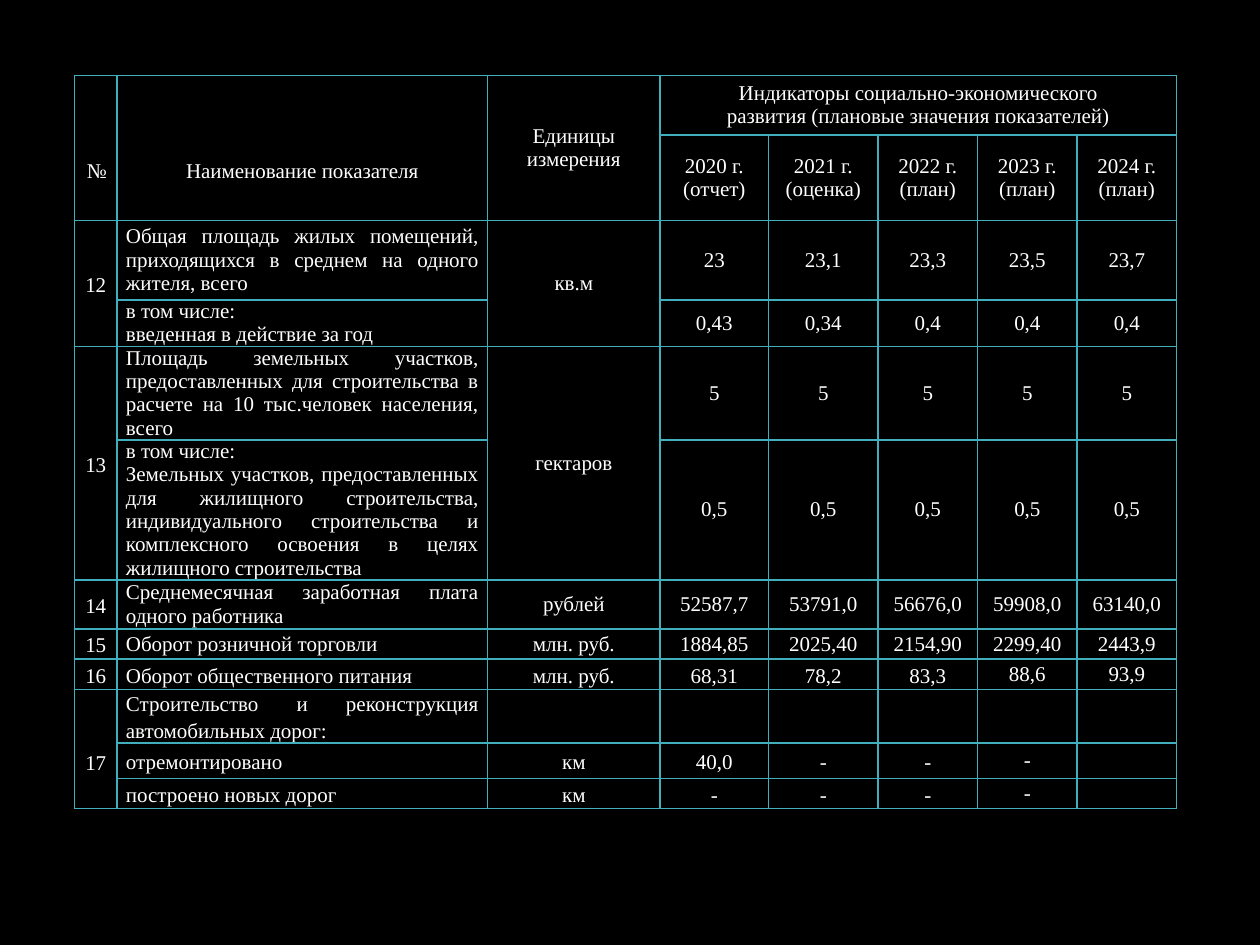
"""Build a slide with a table of socio-economic development indicators."""
from dataclasses import dataclass

from lxml.etree import SubElement
from pptx import Presentation
from pptx.dml.color import RGBColor
from pptx.enum.text import MSO_ANCHOR as Anchor, PP_ALIGN as Align
from pptx.oxml.ns import qn
from pptx.util import Inches, Pt


@dataclass(frozen=True)
class Theme:
    background: str = "000000"
    ink: str = "FFFFFF"
    border: str = "41AEBD"
    font: str = "Times New Roman"
    size: int = 12
    border_width: int = 1
    relaxed: float = 1.15


THEME = Theme()
HEADINGS = [
    ["№", "Наименование показателя", "Единицы\nизмерения",
     "Индикаторы социально-экономического\nразвития (плановые значения показателей)",
     "", "", "", ""],
    ["", "", "", "2020 г. (отчет)", "2021 г. (оценка)", "2022 г. (план)",
     "2023 г. (план)", "2024 г. (план)"],
]
INDICATORS = [
    ["12", "Общая площадь жилых помещений, приходящихся в среднем на одного жителя, всего",
     "кв.м", "23", "23,1", "23,3", "23,5", "23,7"],
    ["", "в том числе:\nвведенная в действие за год", "",
     "0,43", "0,34", "0,4", "0,4", "0,4"],
    ["13", "Площадь земельных участков, предоставленных для строительства в расчете "
     "на 10 тыс.человек населения, всего", "гектаров", "5", "5", "5", "5", "5"],
    ["", "в том числе:\nЗемельных участков, предоставленных для жилищного строительства, "
     "индивидуального строительства и комплексного освоения в целях жилищного строительства",
     "", "0,5", "0,5", "0,5", "0,5", "0,5"],
    ["14", "Среднемесячная заработная плата одного работника", "рублей",
     "52587,7", "53791,0", "56676,0", "59908,0", "63140,0"],
    ["15", "Оборот розничной торговли", "млн. руб.",
     "1884,85", "2025,40", "2154,90", "2299,40", "2443,9"],
    ["16", "Оборот общественного питания", "млн. руб.",
     "68,31", "78,2", "83,3", "88,6", "93,9"],
    ["17", "Строительство и реконструкция автомобильных дорог:", "", "", "", "", "", ""],
    ["", "отремонтировано", "км", "40,0", "-", "-", "-", ""],
    ["", "построено новых дорог", "км", "-", "-", "-", "-", ""],
]
ROWS = HEADINGS + INDICATORS
WIDTHS = [0.34, 2.94, 1.37, 0.86, 0.87, 0.79, 0.79, 0.79]
HEIGHTS = [0.47, 0.68, 0.63, 0.37, 0.74, 1.11, 0.39, 0.24, 0.24, 0.42, 0.28, 0.24]
LEFT, TOP = 0.59, 0.6
MERGES = [((0, 0), (1, 0)), ((0, 1), (1, 1)), ((0, 2), (1, 2)), ((0, 3), (0, 7)),
          ((2, 0), (3, 0)), ((2, 2), (3, 2)), ((4, 0), (5, 0)), ((4, 2), (5, 2)),
          ((9, 0), (11, 0))]
TOP_INSETS = {(0, 0): 0.42, (0, 1): 0.42, (9, 0): 0.21}
FIRST_RELAXED_ROW, FIRST_TIGHT_COLUMN = 8, 6


def draw_borders(cell):
    properties = cell._tc.get_or_add_tcPr()
    for side in ("lnL", "lnR", "lnT", "lnB"):
        line = SubElement(properties, qn(f"a:{side}"), w=str(Pt(THEME.border_width)))
        SubElement(SubElement(line, qn("a:solidFill")), qn("a:srgbClr"), val=THEME.border)


def write_cell(cell, text, row, column):
    heading = row < len(HEADINGS)
    side, edge = (0.1, 0.05) if heading else (0.07, 0)
    cell.margin_left = cell.margin_right = Inches(side)
    cell.margin_top = Inches(TOP_INSETS.get((row, column), edge))
    cell.margin_bottom = Inches(edge)
    cell.vertical_anchor = Anchor.MIDDLE
    draw_borders(cell)
    cell.fill.background()
    relaxed = not heading and (
        column == 0 or row >= FIRST_RELAXED_ROW and column < FIRST_TIGHT_COLUMN)
    frame = cell.text_frame
    for index, words in enumerate(text.split("\n")):
        paragraph = frame.add_paragraph() if index else frame.paragraphs[0]
        paragraph.alignment = Align.JUSTIFY if column == 1 and not heading else Align.CENTER
        if relaxed:
            paragraph.line_spacing = THEME.relaxed
        if not words:
            SubElement(paragraph._p, qn("a:endParaRPr"), sz=str(THEME.size * 100))
            continue
        run = paragraph.add_run()
        run.text = words
        run.font.name = THEME.font
        run.font.size = Pt(THEME.size)
        run.font.color.rgb = RGBColor.from_string(THEME.ink)


def main():
    deck = Presentation()
    deck.slide_width, deck.slide_height = Inches(10), Inches(7.5)
    slide = deck.slides.add_slide(deck.slide_layouts[6])
    slide.background.fill.solid()
    slide.background.fill.fore_color.rgb = RGBColor.from_string(THEME.background)
    indicators = slide.shapes.add_table(
        len(ROWS), len(WIDTHS), Inches(LEFT), Inches(TOP),
        Inches(sum(WIDTHS)), Inches(sum(HEIGHTS))).table
    indicators.first_row = indicators.horz_banding = False
    for column, width in zip(indicators.columns, WIDTHS):
        column.width = Inches(width)
    for row, height in zip(indicators.rows, HEIGHTS):
        row.height = Inches(height)
    for row, texts in enumerate(ROWS):
        for column, text in enumerate(texts):
            write_cell(indicators.cell(row, column), text, row, column)
    for first, last in MERGES:
        indicators.cell(*first).merge(indicators.cell(*last))
    deck.save("out.pptx")


if __name__ == "__main__":
    main()
